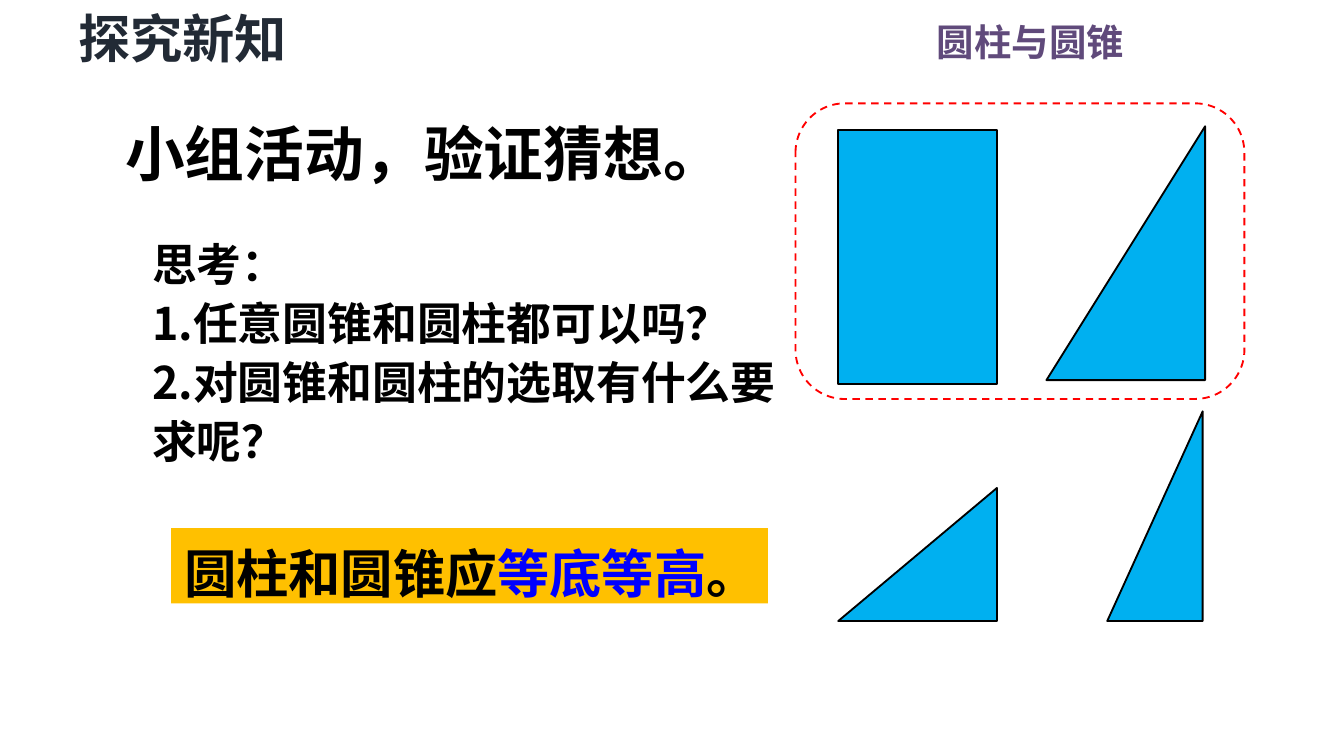
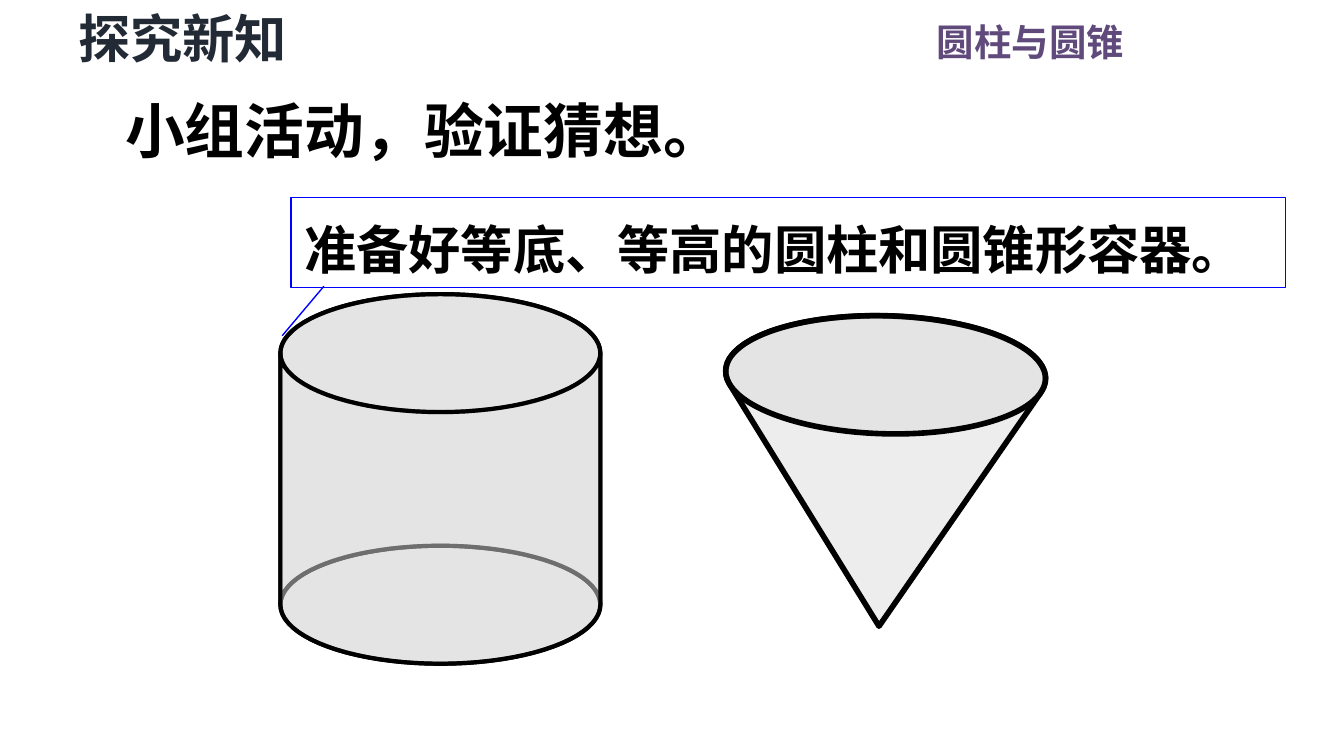
from math import asin, cos, degrees, radians, sin

from lxml.etree import SubElement
from pptx import Presentation
from pptx.dml.color import RGBColor
from pptx.enum.dml import MSO_LINE
from pptx.enum.shapes import MSO_SHAPE as Preset
from pptx.enum.text import MSO_ANCHOR as Anchor, MSO_AUTO_SIZE as AutoSize, PP_ALIGN as Align
from pptx.oxml.ns import qn
from pptx.util import Pt

FONT = "Noto Sans CJK SC"
BLACK, BLUE, SKY, AMBER, RED = "000000", "0000FF", "00B0F0", "FFC000", "FF0000"
PURPLE, NAVY, GLASS = "604A7B", "222A35", "DDDDDD"
SINGLE, MEDIUM, LOOSE = 1.0, 1.1, 1.2  # line spacing

SECTION = "探究新知"
UNIT = "圆柱与圆锥"
ACTIVITY = "小组活动，验证猜想。"
QUESTIONS = [
    "思考：",
    "1.任意圆锥和圆柱都可以吗？",
    "2.对圆锥和圆柱的选取有什么要求呢？",
]
ANSWER = [("圆柱和圆锥应", BLACK), ("等底等高", BLUE), ("。", BLACK)]
PREPARATION = "准备好等底、等高的圆柱和圆锥形容器。"
POINTER_PERCENT = (98.3, 3.3, 153.4, -0.9)  # start y, x and end y, x

CYLINDER_SECTION = (449.1, 69.8, 85, 136)
CONE_SECTIONS = [
    (560.6, 67.7, 85, 136),
    (449.1, 261.4, 85, 71.3),
    (593.2, 220.4, 51.1, 112.3),
]
MATCHING_PAIR = (426.2, 55.4, 240.5, 158.4)

RIM_WIDTH, RIM_HEIGHT = 171.4, 63.2
CYLINDER_LEFT, CYLINDER_TOP, CYLINDER_SIDE = 150.2, 157.6, 134.8
CONE_LEFT, CONE_TOP, CONE_HEIGHT, CONE_TILT = 387.4, 169.2, 166.3, 1.5


def color(code):
    return RGBColor.from_string(code)


def box_of(left, top, width, height):
    return Pt(left), Pt(top), Pt(width), Pt(height)


def write(holder, lines, size, spacing, align=Align.LEFT, insets=(7.2, 3.6, 7.2, 3.6)):
    """Fill a shape with lines, each a list of (text, colour) runs."""
    frame = holder.text_frame
    frame.word_wrap = True
    frame.auto_size = AutoSize.NONE
    frame.vertical_anchor = Anchor.TOP
    (frame.margin_left, frame.margin_top,
     frame.margin_right, frame.margin_bottom) = map(Pt, insets)
    for index, line in enumerate(lines):
        paragraph = frame.add_paragraph() if index else frame.paragraphs[0]
        paragraph.alignment = align
        paragraph.line_spacing = spacing
        for text, code in line:
            run = paragraph.add_run()
            run.text = text
            run.font.size = Pt(size)
            run.font.bold = True
            run.font.color.rgb = color(code)
            run.font.name = FONT
            SubElement(run.font._element, qn("a:ea")).set("typeface", FONT)


def add_label(slide, box, *content, **options):
    write(slide.shapes.add_textbox(*box_of(*box)), *content, **options)


def paint(shape, fill=None, line=None, weight=1.0, opacity=None):
    shape.shadow.inherit = False
    if fill:
        shape.fill.solid()
        shape.fill.fore_color.rgb = color(fill)
        if opacity:
            tint = shape._element.spPr.find(qn("a:solidFill"))[0]
            SubElement(tint, qn("a:alpha")).set("val", str(opacity * 1000))
    else:
        shape.fill.background()
    if line:
        shape.line.color.rgb = color(line)
        shape.line.width = Pt(weight)
    else:
        shape.line.fill.background()
    return shape


def add_preset(slide, preset, box, **look):
    return paint(slide.shapes.add_shape(preset, *box_of(*box)), **look)


def add_outline(slide, points, **look):
    start, *others = [(Pt(x), Pt(y)) for x, y in points]
    builder = slide.shapes.build_freeform(*start, scale=1.0)
    builder.add_line_segments(others, close=True)
    return paint(builder.convert_to_shape(), **look)


def rim_arc(left, top, start, end, steps=40):
    """Points along a rim; degrees run clockwise from the right end."""
    angles = [radians(start + (end - start) * i / steps) for i in range(steps + 1)]
    return [(left + RIM_WIDTH / 2 * (1 + cos(a)), top + RIM_HEIGHT / 2 * (1 + sin(a)))
            for a in angles]


def add_lesson_slide(deck, activity_top):
    slide = deck.slides.add_slide(deck.slide_layouts[5])
    title = slide.shapes.title
    title.left, title.top, title.width, title.height = box_of(37, 0, 145.4, 39.6)
    write(title, [[(SECTION, NAVY)]], 28, SINGLE, insets=(5, 3.6, 5, 3.6))
    add_label(slide, (484.6, 6.5, 124.6, 31.7), [[(UNIT, PURPLE)]], 20, SINGLE,
              align=Align.RIGHT)
    add_label(slide, (60, activity_top, 583.9, 47.5), [[(ACTIVITY, BLACK)]], 32, LOOSE)
    return slide


def add_guess_slide(deck):
    slide = add_lesson_slide(deck, 51.1)
    add_label(slide, (74.4, 120.2, 354.2, 135.4),
              [[(question, BLACK)] for question in QUESTIONS], 24, MEDIUM)
    add_preset(slide, Preset.RECTANGLE, CYLINDER_SECTION, fill=SKY, line=BLACK)
    for box in CONE_SECTIONS:
        half = add_preset(slide, Preset.RIGHT_TRIANGLE, box, fill=SKY, line=BLACK)
        half._element.spPr.xfrm.set("flipH", "1")
    answer = add_preset(slide, Preset.RECTANGLE, (91.7, 283, 319.7, 40.3), fill=AMBER)
    write(answer, [ANSWER], 28, MEDIUM, insets=(7.2, 3.6, 0, 3.6))
    pair = add_preset(slide, Preset.ROUNDED_RECTANGLE, MATCHING_PAIR, line=RED)
    pair.line.dash_style = MSO_LINE.DASH


def add_cylinder(slide):
    glass = dict(fill=GLASS, opacity=50, line=BLACK, weight=2.25)
    rim_tops = CYLINDER_TOP, CYLINDER_TOP + CYLINDER_SIDE
    for top in reversed(rim_tops):
        add_preset(slide, Preset.OVAL, (CYLINDER_LEFT, top, RIM_WIDTH, RIM_HEIGHT), **glass)
    for end in (360, 0):  # far wall over the back, near wall over the front
        upper, lower = (rim_arc(CYLINDER_LEFT, top, 180, end) for top in rim_tops)
        add_outline(slide, upper + lower[::-1], **glass)


def add_cone(slide):
    glass = dict(fill=GLASS, opacity=50, line=BLACK, weight=3)
    radius = RIM_HEIGHT / 2
    tangent = degrees(asin(radius / (CONE_HEIGHT - radius)))
    apex = (CONE_LEFT + RIM_WIDTH / 2, CONE_TOP + CONE_HEIGHT)
    wall = rim_arc(CONE_LEFT, CONE_TOP, 180 - tangent, 360 + tangent) + [apex]
    add_outline(slide, wall, **glass).rotation = CONE_TILT
    # The rim shifts sideways as the cone tilts about its centre.
    shift = (CONE_HEIGHT / 2 - radius) * sin(radians(CONE_TILT))
    rim = add_preset(slide, Preset.OVAL,
                     (CONE_LEFT + shift, CONE_TOP, RIM_WIDTH, RIM_HEIGHT), **glass)
    rim.rotation = CONE_TILT


def add_containers_slide(deck):
    slide = add_lesson_slide(deck, 38.9)
    add_cylinder(slide)
    add_cone(slide)
    callout = add_preset(slide, Preset.LINE_CALLOUT_1, (156, 106, 532.8, 48.2),
                         line=BLUE, weight=0.75)
    for index, percent in enumerate(POINTER_PERCENT):
        callout.adjustments[index] = percent / 100
    write(callout, [[(PREPARATION, BLACK)]], 28, LOOSE)


def main():
    deck = Presentation()
    deck.slide_width, deck.slide_height = Pt(720), Pt(405)
    add_guess_slide(deck)
    add_containers_slide(deck)
    deck.save("out.pptx")


if __name__ == "__main__":
    main()
